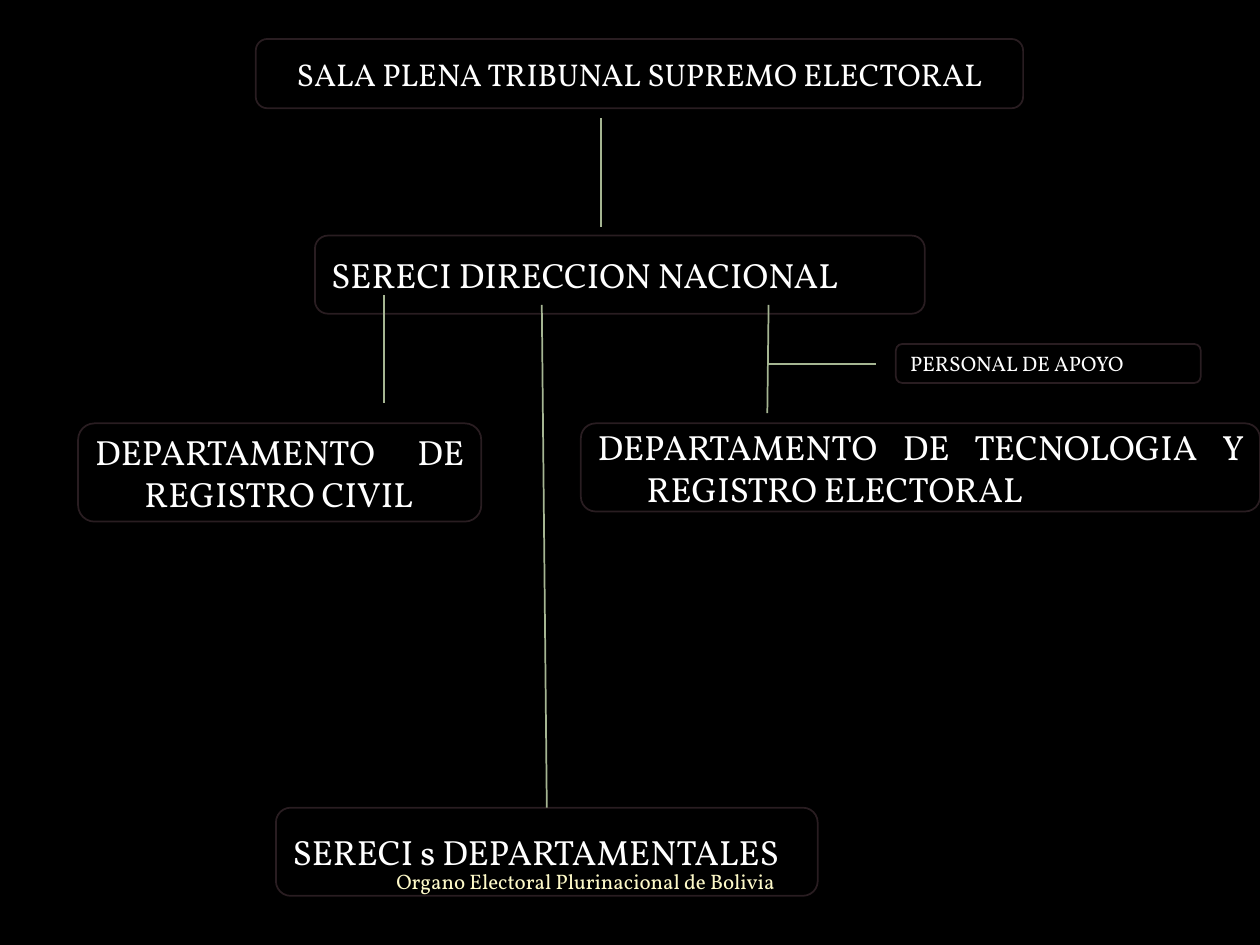
from dataclasses import dataclass

from lxml import etree
from pptx import Presentation
from pptx.dml.color import RGBColor
from pptx.enum.shapes import MSO_CONNECTOR, MSO_SHAPE
from pptx.enum.text import MSO_ANCHOR, PP_ALIGN
from pptx.oxml.ns import qn
from pptx.util import Inches, Pt

ROUNDED = MSO_SHAPE.ROUNDED_RECTANGLE
STRAIGHT = MSO_CONNECTOR.STRAIGHT
MIDDLE = MSO_ANCHOR.MIDDLE
CENTER, RIGHT, JUSTIFY = PP_ALIGN.CENTER, PP_ALIGN.RIGHT, PP_ALIGN.JUSTIFY
TOP_SIDE = 0

SLIDE_WIDTH, SLIDE_HEIGHT = Inches(10), Inches(7.5)


@dataclass(frozen=True)
class Theme:
    font: str = "Vollkorn"
    background: RGBColor = RGBColor(0x00, 0x00, 0x00)
    text: RGBColor = RGBColor(0xFF, 0xFF, 0xFF)
    footer: RGBColor = RGBColor(0xFE, 0xFA, 0xC9)
    border: RGBColor = RGBColor(0xD0, 0x92, 0xA7)
    border_opacity: int = 20
    link: RGBColor = RGBColor(0xA5, 0xB5, 0x92)
    line_width: Pt = Pt(1)
    unit_size: Pt = Pt(20)
    head_size: Pt = Pt(18)
    small_size: Pt = Pt(12)
    hanging: Inches = Inches(0.39)


THEME = Theme()


def across(percent):
    return round(SLIDE_WIDTH * percent / 100)


def down(percent):
    return round(SLIDE_HEIGHT * percent / 100)


def place(left, top, width, height):
    """Turn percentages of the slide into a position and a size."""
    return across(left), down(top), across(width), down(height)


def write(holder, text, size=THEME.unit_size, color=THEME.text,
          align=JUSTIFY, hanging=0):
    frame = holder.text_frame
    frame.word_wrap = True
    frame.vertical_anchor = MIDDLE
    paragraph = frame.paragraphs[0]
    paragraph.alignment = align
    if hanging:
        properties = paragraph._p.get_or_add_pPr()
        properties.set("marL", str(hanging))
        properties.set("indent", str(-hanging))
    run = paragraph.add_run()
    run.text = text
    run.font.name = THEME.font
    run.font.size = size
    run.font.color.rgb = color


def add_unit(slide, text, area, hanging=THEME.hanging, **text_format):
    """Add one box of the chart with a faint outline."""
    unit = slide.shapes.add_shape(ROUNDED, *place(*area))
    unit.shadow.inherit = False
    unit.fill.background()
    unit.line.color.rgb = THEME.border
    unit.line.width = THEME.line_width
    outline_color = unit.line._ln.find(".//" + qn("a:srgbClr"))
    alpha = etree.SubElement(outline_color, qn("a:alpha"))
    alpha.set("val", str(THEME.border_opacity * 1000))
    write(unit, text, hanging=hanging, **text_format)
    return unit


def add_link(slide, start, end):
    link = slide.shapes.add_connector(
        STRAIGHT, across(start[0]), down(start[1]), across(end[0]), down(end[1]))
    link.line.color.rgb = THEME.link
    link.line.width = THEME.line_width
    etree.SubElement(link._element.spPr, qn("a:effectLst"))
    return link


def add_footer(slide, text, area):
    footer = slide.shapes.add_textbox(*place(*area))
    write(footer, text, size=THEME.small_size, color=THEME.footer, align=RIGHT)


def main():
    presentation = Presentation()
    presentation.slide_width = SLIDE_WIDTH
    presentation.slide_height = SLIDE_HEIGHT
    slide = presentation.slides.add_slide(presentation.slide_layouts[6])
    slide.background.fill.solid()
    slide.background.fill.fore_color.rgb = THEME.background

    add_unit(slide, "SERECI DIRECCION NACIONAL", (25, 24.93, 48.4, 8.27))
    add_unit(slide, "SALA PLENA TRIBUNAL SUPREMO ELECTORAL",
             (20.3, 4.13, 60.9, 7.33),
             hanging=0, size=THEME.head_size, align=CENTER)
    add_unit(slide, "DEPARTAMENTO DE REGISTRO CIVIL", (6.2, 44.8, 32, 10.4))
    add_unit(slide, "DEPARTAMENTO DE TECNOLOGIA Y REGISTRO ELECTORAL",
             (46.1, 44.8, 53.9, 9.33))
    regional_offices = add_unit(slide, "SERECI s DEPARTAMENTALES",
                                (21.9, 85.47, 43, 9.33))
    add_unit(slide, "PERSONAL DE APOYO", (71.1, 36.4, 24.2, 4.13),
             size=THEME.small_size)

    add_link(slide, (61, 32.27), (60.9, 43.73))
    add_link(slide, (30.5, 31.2), (30.5, 42.67))
    add_link(slide, (47.7, 12.53), (47.7, 24))
    regional_link = add_link(slide, (43, 32.27), (43.4, 85.47))
    regional_link.end_connect(regional_offices, TOP_SIDE)
    add_link(slide, (69.5, 38.53), (60.9, 38.53))

    add_footer(slide, "Organo Electoral Plurinacional de Bolivia",
               (23.3, 90.4, 39.2, 5.6))
    presentation.save("out.pptx")


if __name__ == "__main__":
    main()
